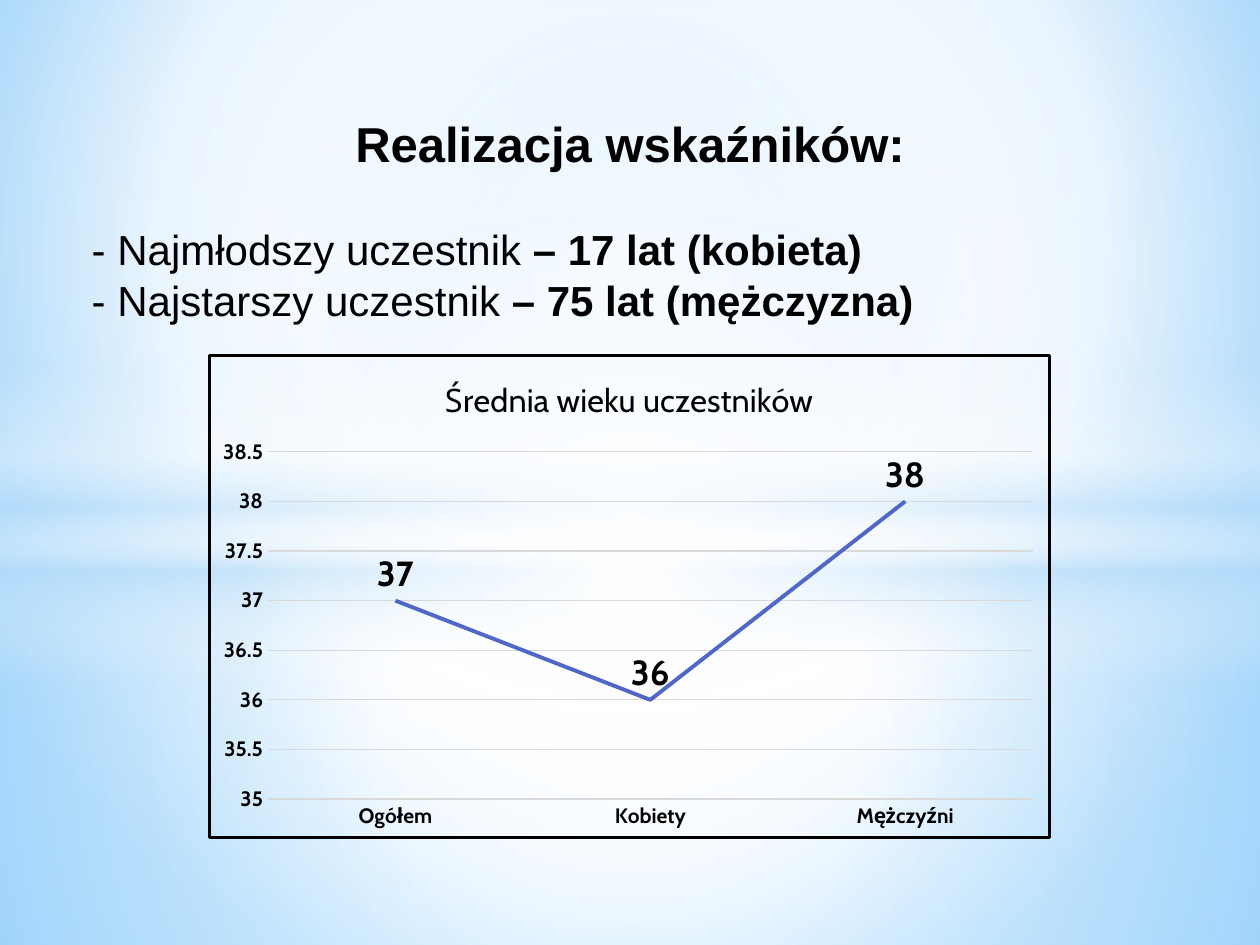
from lxml import etree
from pptx import Presentation
from pptx import util as u
from pptx.chart import data as chart_data
from pptx.dml.color import RGBColor
from pptx.enum import chart as charts, shapes, text
from pptx.oxml import ns, parse_xml

Pt = u.Pt
COLORS = {
    "black": "000000", "white": "FFFFFF", "pale": "B4DCFA", "sky": "9ED5FF",
    "blue": "5BB9FF", "grid": "D9D9D9", "series": "4E67C8",
}
CENTRE = (50, 50, 50, 50)


def color(name):
    return RGBColor.from_string(COLORS[name])


def set_gradient(element, stops, focus=None, angle=0):
    gradient = etree.Element(ns.qn("a:gradFill"), rotWithShape="1")
    stop_list = etree.SubElement(gradient, ns.qn("a:gsLst"))
    for position, name, opacity in stops:
        stop = etree.SubElement(stop_list, ns.qn("a:gs"), pos=str(position * 1000))
        tint = etree.SubElement(stop, ns.qn("a:srgbClr"), val=COLORS[name])
        if opacity < 100:
            etree.SubElement(tint, ns.qn("a:alpha"), val=str(opacity * 1000))
    if focus:
        path = etree.SubElement(gradient, ns.qn("a:path"))
        path.set("path", "circle")
        sides = {side: str(value * 1000) for side, value in zip("ltrb", focus)}
        etree.SubElement(path, ns.qn("a:fillToRect"), **sides)
    else:
        etree.SubElement(gradient, ns.qn("a:lin"), ang=str(angle * 60000), scaled="0")
    solid = next(element.iter(ns.qn("a:solidFill")))
    solid.getparent().replace(solid, gradient)


def add_glow(slide, kind, box, stops, **direction):
    shape = slide.shapes.add_shape(kind, *box)
    shape.shadow.inherit = False
    shape.line.fill.background()
    shape.fill.solid()
    set_gradient(shape.element, stops, **direction)


def add_backdrop(slide, left, top, width, height):
    slide.background.fill.solid()
    set_gradient(slide.element, [(0, "sky", 100), (60, "white", 100), (100, "blue", 100)],
                 focus=(20, 10, 20, 60))
    rectangle, oval = shapes.MSO_SHAPE.RECTANGLE, shapes.MSO_SHAPE.OVAL
    horizon = Pt(304.56)
    add_glow(slide, rectangle, (left, top + horizon, width, height - horizon),
             [(0, "white", 91), (37, "white", 76), (100, "pale", 79)], focus=CENTRE)
    add_glow(slide, rectangle, (left, top, width, horizon),
             [(0, "white", 89), (48, "white", 62), (100, "pale", 79)], focus=CENTRE)
    add_glow(slide, rectangle, (left, top + Pt(208.8), width, Pt(180)),
             [(0, "white", 0), (29, "white", 30), (45, "pale", 40),
              (55, "white", 26), (65, "pale", 60), (100, "white", 0)], angle=90)
    add_glow(slide, oval, (left, top + Pt(126), width, Pt(401.76)),
             [(0, "white", 100), (54, "white", 0)], focus=CENTRE)


def format_font(font, size, bold, name="Cabin"):
    font.name, font.size, font.bold = name, Pt(size), bold
    font.color.rgb = color("black")


def add_summary(slide, left, top, width, height):
    frame = slide.shapes.add_textbox(left, top, width, height).text_frame
    frame.word_wrap = True
    frame.vertical_anchor = text.MSO_ANCHOR.BOTTOM
    frame.text = "Realizacja wskaźników:"
    title = frame.paragraphs[0]
    title.alignment = text.PP_ALIGN.CENTER
    format_font(title.runs[0].font, 28, True, "Arial")
    facts = [("- Najmłodszy uczestnik ", "– 17 lat (kobieta)"),
             ("- Najstarszy uczestnik ", "– 75 lat (mężczyzna)")]
    for index, fact in enumerate(facts):
        paragraph = frame.add_paragraph()
        paragraph.line_spacing = Pt(29.15)
        paragraph.space_before = Pt(0 if index else 29)
        for words, bold in zip(fact, (False, True)):
            run = paragraph.add_run()
            run.text = words
            format_font(run.font, 24, bold, "Arial")


def frame_chart(chart):
    border = parse_xml(
        f'<c:spPr {ns.nsdecls("c", "a")}><a:noFill/><a:ln w="{Pt(1.5)}"><a:solidFill>'
        f'<a:srgbClr val="{COLORS["black"]}"/></a:solidFill></a:ln></c:spPr>')
    chart.element.find(ns.qn("c:chart")).addnext(border)


def place_plot(chart, x, y, w, h):
    plot_area = next(chart.element.iter(ns.qn("c:plotArea")))
    for old in plot_area.findall(ns.qn("c:layout")):
        plot_area.remove(old)
    layout = etree.Element(ns.qn("c:layout"))
    manual = etree.SubElement(layout, ns.qn("c:manualLayout"))
    settings = {"layoutTarget": "inner", "xMode": "edge", "yMode": "edge",
                "x": x, "y": y, "w": w, "h": h}
    for tag, value in settings.items():
        etree.SubElement(manual, ns.qn(f"c:{tag}"), val=str(value))
    plot_area.insert(0, layout)


def add_age_chart(slide, left, top, width, height):
    ages = chart_data.CategoryChartData()
    ages.categories = ["Ogółem", "Kobiety", "Mężczyźni"]
    ages.add_series("Średnia wieku uczestników", (37, 36, 38))
    chart = slide.shapes.add_chart(
        charts.XL_CHART_TYPE.LINE, left, top, width, height, ages).chart
    format_font(chart.font, 10, False)
    chart.has_legend = False
    chart.has_title = True
    title = chart.chart_title.text_frame
    title.text = "Średnia wieku uczestników"
    format_font(title.paragraphs[0].runs[0].font, 18.6, False)

    for axis in (chart.category_axis, chart.value_axis):
        axis.major_tick_mark = axis.minor_tick_mark = charts.XL_TICK_MARK.NONE
        format_font(axis.tick_labels.font, 12, True)
    values = chart.value_axis
    values.minimum_scale, values.maximum_scale, values.major_unit = 35, 38.5, 0.5
    values.has_major_gridlines = True
    values.format.line.fill.background()
    for line in (chart.category_axis.format.line, values.major_gridlines.format.line):
        line.color.rgb = color("grid")
        line.width = Pt(0.75)

    plot = chart.plots[0]
    plot.vary_by_categories = False
    series = plot.series[0]
    series.smooth = False
    series.format.line.color.rgb = color("series")
    series.format.line.width = Pt(2.25)
    labels = series.data_labels
    labels.show_value = True
    labels.position = charts.XL_LABEL_POSITION.ABOVE
    format_font(labels.font, 20, True)
    frame_chart(chart)
    place_plot(chart, 0.07, 0.2, 0.91, 0.72)


def main():
    presentation = Presentation()
    presentation.slide_width, presentation.slide_height = Pt(720), Pt(540)
    slide = presentation.slides.add_slide(presentation.slide_layouts[6])
    add_backdrop(slide, 0, 0, Pt(720), Pt(540))
    add_summary(slide, Pt(45.36), Pt(31.68), Pt(629.28), Pt(157.68))
    add_age_chart(slide, Pt(118.8), Pt(202.32), Pt(481.68), Pt(277.2))
    presentation.save("out.pptx")


if __name__ == "__main__":
    main()
